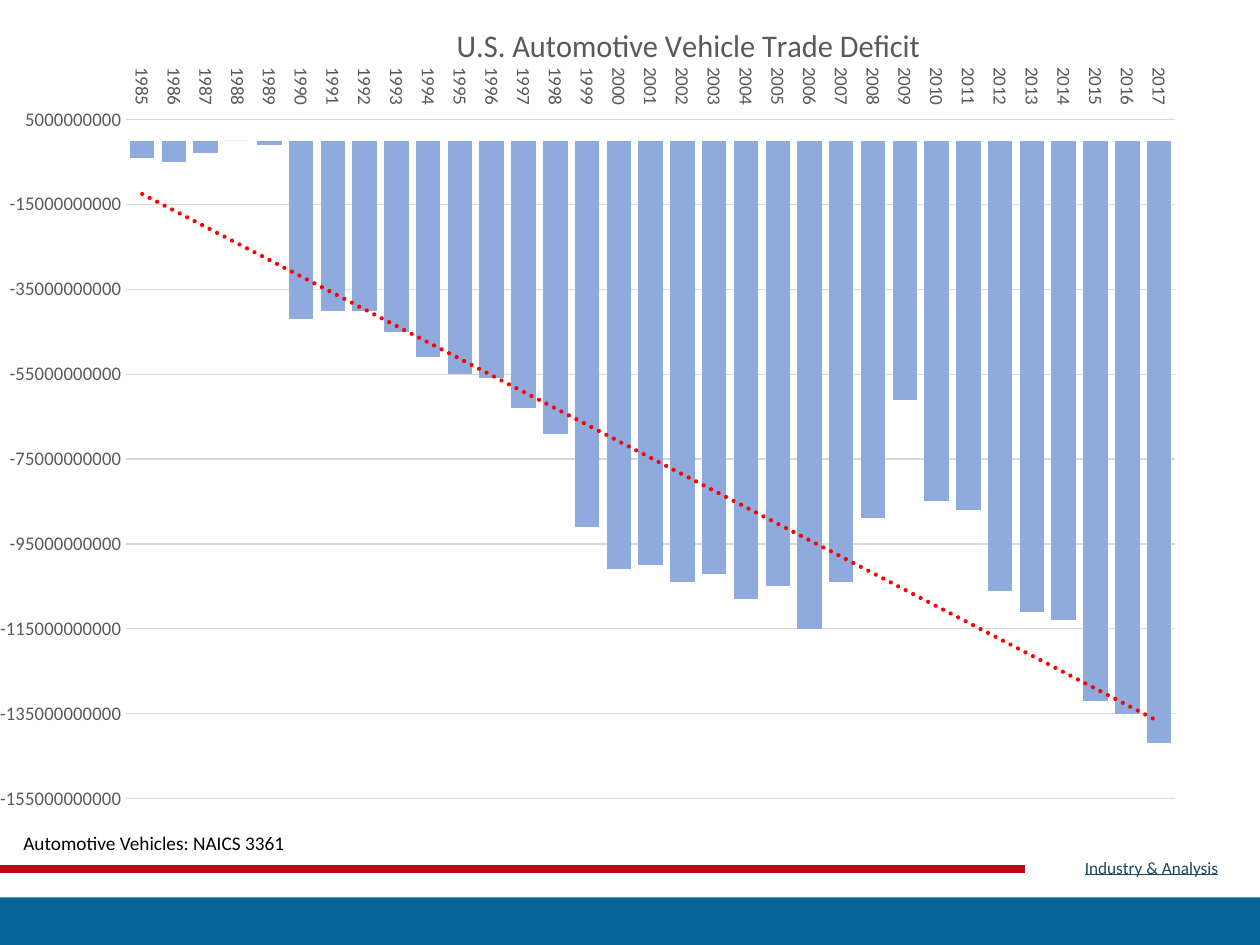
import pptx
import pptx.chart.data
import pptx.dml.color
import pptx.enum.chart
import pptx.enum.dml
import pptx.enum.shapes
import pptx.enum.text
import pptx.oxml
import pptx.oxml.ns
import pptx.util
from dataclasses import dataclass
from lxml import etree

Cm = pptx.util.Cm
Pt = pptx.util.Pt
BILLION = 10 ** 9
START = 1985
GAPS = [-4, -5, -3, 0, -1, -42, -40, -40, -45, -51, -55,
        -56, -63, -69, -91, -101, -100, -104, -102, -108, -105, -115,
        -104, -89, -61, -85, -87, -106, -111, -113, -132, -135, -142]


@dataclass(frozen=True)
class Theme:
    font: str = "Calibri"
    band: str = "066699"
    red: str = "B90B18"
    link: str = "1B4660"
    ink: str = "000000"
    grey: str = "595959"
    grid: str = "D9D9D9"
    bar: str = "8FAADC"
    trend: str = "FF0000"
    title: float = 18
    note: float = 11
    small: float = 9.8


THEME = Theme()


def rgb(code):
    return pptx.dml.color.RGBColor.from_string(code)


def style(font, size, color):
    font.name = THEME.font
    font.size = Pt(size)
    font.color.rgb = rgb(color)
    font.bold = False


def write(slide, box, text, size, color):
    frame = slide.shapes.add_textbox(*map(Cm, box)).text_frame
    frame.word_wrap = True
    para = frame.paragraphs[0]
    para.text = text
    style(para.font, size, color)


def rule(slide, left, right, top, width, color):
    line = slide.shapes.add_connector(
        pptx.enum.shapes.MSO_CONNECTOR.STRAIGHT,
        Cm(left), Cm(top), Cm(right), Cm(top))
    line.line.color.rgb = rgb(color)
    line.line.width = Pt(width)
    etree.SubElement(line._element.spPr, pptx.oxml.ns.qn("a:effectLst"))


def footer(slide, left, top, width, height):
    depth = 0.96
    band = slide.shapes.add_shape(
        pptx.enum.shapes.MSO_SHAPE.RECTANGLE,
        Cm(left), Cm(top + height - depth), Cm(width), Cm(depth))
    band.shadow.inherit = False
    band.fill.solid()
    band.fill.fore_color.rgb = rgb(THEME.band)
    band.line.fill.background()
    rule(slide, left - 0.05, left + 20.67, top + 0.37, 4.5, THEME.red)
    write(slide, (left + 21.62, top, 3.78, 0.69),
          "Industry & Analysis", THEME.small, THEME.link)
    rule(slide, left + 21.87, left + 24.56, top + 0.48, 0.5, THEME.link)


def layout(x, y, size=None):
    tags = [("xMode", "edge"), ("yMode", "edge"), ("x", x), ("y", y)]
    if size:
        tags = [("layoutTarget", "inner")] + tags + list(zip("wh", size))
    inner = "".join(f'<c:{tag} val="{val}"/>' for tag, val in tags)
    return pptx.oxml.parse_xml(
        f'<c:layout {pptx.oxml.ns.nsdecls("c")}>'
        f'<c:manualLayout>{inner}</c:manualLayout></c:layout>')


def place(node, item, after=None):
    for old in node.findall(pptx.oxml.ns.qn("c:layout")):
        node.remove(old)
    if after is None:
        node.insert(0, item)
    else:
        node.find(pptx.oxml.ns.qn(after)).addnext(item)


def trend(series):
    line = pptx.oxml.parse_xml(
        f'<c:trendline {pptx.oxml.ns.nsdecls("c", "a")}><c:spPr>'
        f'<a:ln w="{Pt(2.5)}" cap="rnd"><a:solidFill>'
        f'<a:srgbClr val="{THEME.trend}"/></a:solidFill>'
        '<a:prstDash val="sysDot"/></a:ln></c:spPr>'
        '<c:trendlineType val="linear"/><c:dispRSqr val="0"/>'
        '<c:dispEq val="0"/></c:trendline>')
    series._element.find(pptx.oxml.ns.qn("c:cat")).addprevious(line)


def axes(chart):
    kind = pptx.enum.chart
    years, money = chart.category_axis, chart.value_axis
    for axis in (years, money):
        style(axis.tick_labels.font, THEME.note, THEME.grey)
        axis.format.line.fill.background()
        axis.minor_tick_mark = kind.XL_TICK_MARK.NONE
    years.major_tick_mark = kind.XL_TICK_MARK.OUTSIDE
    years.tick_label_position = kind.XL_TICK_LABEL_POSITION.HIGH
    body = years._element.find(
        pptx.oxml.ns.qn("c:txPr")).find(pptx.oxml.ns.qn("a:bodyPr"))
    body.set("rot", "5400000")
    body.set("vert", "horz")
    money.major_tick_mark = kind.XL_TICK_MARK.NONE
    money.maximum_scale = 5 * BILLION
    money.minimum_scale = -155 * BILLION
    money.major_unit = 20 * BILLION
    money.tick_labels.number_format = "0"
    money.tick_labels.number_format_is_linked = False
    money.has_major_gridlines = True
    money.major_gridlines.format.line.color.rgb = rgb(THEME.grid)
    money.major_gridlines.format.line.width = Pt(0.75)


def deficit(slide, *box):
    data = pptx.chart.data.CategoryChartData()
    data.categories = [str(START + n) for n in range(len(GAPS))]
    data.add_series("Series 1", [gap * BILLION for gap in GAPS])
    chart = slide.shapes.add_chart(
        pptx.enum.chart.XL_CHART_TYPE.COLUMN_CLUSTERED,
        *map(Cm, box), data).chart
    style(chart.font, 10, THEME.ink)
    chart.has_legend = False
    chart.has_title = True
    para = chart.chart_title.text_frame.paragraphs[0]
    para.text = "U.S. Automotive Vehicle Trade Deficit"
    style(para.font, THEME.title, THEME.grey)
    place(chart.chart_title._element, layout(0.355, 0.01), "c:tx")
    area = chart._chartSpace.chart.plotArea
    place(area, layout(0.074, 0.136, (0.907, 0.842)))
    axes(chart)
    plot = chart.plots[0]
    plot.gap_width = 30
    plot.overlap = 100
    plot.vary_by_categories = False
    series = plot.series[0]
    series.invert_if_negative = False
    series.format.fill.solid()
    series.format.fill.fore_color.rgb = rgb(THEME.bar)
    trend(series)


def main():
    deck = pptx.Presentation()
    deck.slide_width, deck.slide_height = Cm(25.4), Cm(19.05)
    slide = deck.slides.add_slide(deck.slide_layouts[6])
    footer(slide, 0, 17.15, 25.4, 1.9)
    write(slide, (0.22, 16.64, 6, 0.64),
          "Automotive Vehicles: NAICS 3361", THEME.note, THEME.ink)
    deficit(slide, 0, 0.2, 24.13, 16.26)
    deck.save("out.pptx")


if __name__ == "__main__":
    main()
